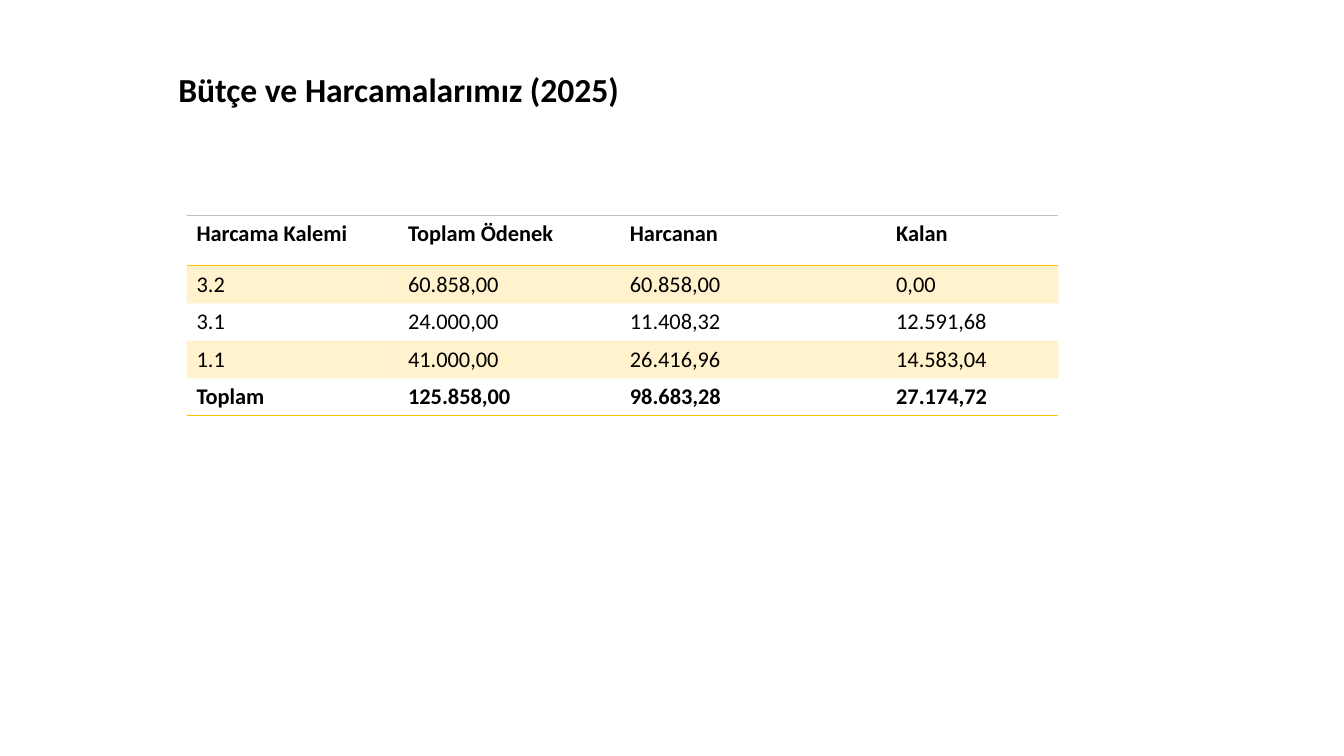
from dataclasses import dataclass

from lxml import etree
from pptx import Presentation
from pptx import util as u
from pptx.dml import color
from pptx.enum import text
from pptx.oxml import ns

COLOURS = {"text": "000000", "gold": "FFC000", "grey": "BFBFBF"}
FONT = "Calibri"
PLAIN_STYLE = "{2D5ABB26-0587-4C30-8999-92F81FD0307C}"
COLUMN_WIDTHS = (5.33, 5.59, 6.71, 4.34)
BAND_OPACITY = 20


@dataclass(frozen=True)
class Border:
    side: str
    colour: str
    points: float


@dataclass(frozen=True)
class BudgetRow:
    values: tuple[str, ...]
    height: float = 0.94
    bold: bool = False
    banded: bool = False
    borders: tuple[Border, ...] = ()


GOLD_BOTTOM = Border("lnB", "gold", 1)
ROWS = (
    BudgetRow(("Harcama Kalemi", "Toplam Ödenek", "Harcanan", "Kalan"),
              height=1.27, bold=True,
              borders=(Border("lnT", "grey", 0.5), GOLD_BOTTOM)),
    BudgetRow(("3.2", "60.858,00", "60.858,00", "0,00"), banded=True),
    BudgetRow(("3.1", "24.000,00", "11.408,32", "12.591,68")),
    BudgetRow(("1.1", "41.000,00", "26.416,96", "14.583,04"), banded=True),
    BudgetRow(("Toplam", "125.858,00", "98.683,28", "27.174,72"),
              bold=True, borders=(GOLD_BOTTOM,)),
)


def format_paragraph(paragraph, size: float, bold: bool) -> None:
    paragraph.alignment = text.PP_ALIGN.LEFT
    font = paragraph.font
    font.name = FONT
    font.size = u.Pt(size)
    font.bold = bold
    font.color.rgb = color.RGBColor.from_string(COLOURS["text"])


def add_border(cell, border: Border) -> None:
    properties = cell._tc.get_or_add_tcPr()
    line = etree.SubElement(properties, ns.qn(f"a:{border.side}"),
                            w=str(u.Pt(border.points)))
    fill = etree.SubElement(line, ns.qn("a:solidFill"))
    etree.SubElement(fill, ns.qn("a:srgbClr"), val=COLOURS[border.colour])


def fill_cell(cell, banded: bool) -> None:
    if not banded:
        cell.fill.background()
        return
    cell.fill.solid()
    cell.fill.fore_color.rgb = color.RGBColor.from_string(COLOURS["gold"])
    tint = cell._tc.tcPr.find(f".//{ns.qn('a:srgbClr')}")
    etree.SubElement(tint, ns.qn("a:alpha"), val=str(BAND_OPACITY * 1000))


def add_title(page) -> None:
    title = page.shapes.title
    title.left, title.top = u.Cm(4.24), u.Cm(1.02)
    title.width, title.height = u.Cm(20.52), u.Cm(2.59)
    frame = title.text_frame
    frame.text = "Bütçe ve Harcamalarımız (2025)"
    frame.auto_size = text.MSO_AUTO_SIZE.NONE
    frame.vertical_anchor = text.MSO_ANCHOR.MIDDLE
    paragraph = frame.paragraphs[0]
    paragraph.line_spacing = 0.9
    format_paragraph(paragraph, 24, True)


def add_budget_table(page) -> None:
    table = page.shapes.add_table(
        len(ROWS), len(COLUMN_WIDTHS), u.Cm(4.7), u.Cm(5.43),
        u.Cm(sum(COLUMN_WIDTHS)), u.Cm(sum(row.height for row in ROWS))).table
    table.horz_banding = False
    table._tbl.tblPr.find(ns.qn("a:tableStyleId")).text = PLAIN_STYLE
    for column, width in zip(table.columns, COLUMN_WIDTHS):
        column.width = u.Cm(width)
    for table_row, row in zip(table.rows, ROWS):
        table_row.height = u.Cm(row.height)
        for cell, value in zip(table_row.cells, row.values):
            cell.text = value
            format_paragraph(cell.text_frame.paragraphs[0], 16, row.bold)
            for border in row.borders:
                add_border(cell, border)
            fill_cell(cell, row.banded)


def main() -> None:
    deck = Presentation()
    deck.slide_width, deck.slide_height = u.Cm(33.87), u.Cm(19.05)
    page = deck.slides.add_slide(deck.slide_layouts.get_by_name("Title Only"))
    add_title(page)
    add_budget_table(page)
    deck.save("out.pptx")


if __name__ == "__main__":
    main()
